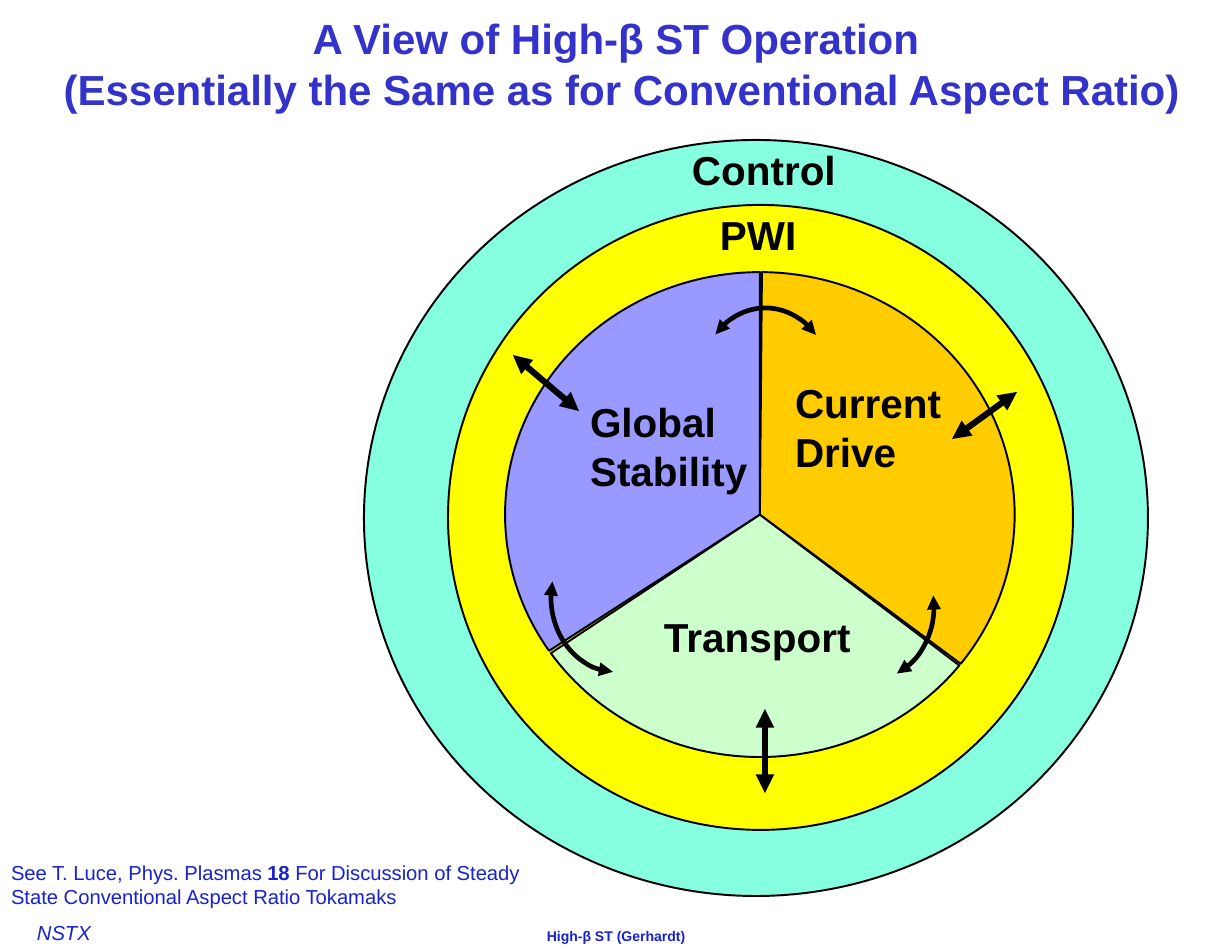
from lxml import etree
from pptx import Presentation
from pptx.dml.color import RGBColor
from pptx.enum.shapes import MSO_CONNECTOR, MSO_SHAPE
from pptx.enum.text import MSO_ANCHOR, PP_ALIGN
from pptx.oxml.ns import qn
from pptx.util import Inches, Pt

ELLIPSE, PIE, ARC = MSO_SHAPE.OVAL, MSO_SHAPE.BLOCK_ARC, MSO_SHAPE.ARC
PIE = MSO_SHAPE.PIE
STRAIGHT = MSO_CONNECTOR.STRAIGHT
LEFT, CENTER = PP_ALIGN.LEFT, PP_ALIGN.CENTER
TOP, MIDDLE = MSO_ANCHOR.TOP, MSO_ANCHOR.MIDDLE

FONT = "Arial"
COLORS = {
    "title": "3333CC", "note": "1822CD", "black": "000000",
    "control": "85FFE0", "pwi": "FFFF00", "transport": "CCFFCC",
    "current": "FFCC00", "stability": "9999FF",
}

# Content: boxes are left, top, width, height in inches; angles are degrees
TITLE = ("A View of High-β ST Operation\n"
         " (Essentially the Same as for Conventional Aspect Ratio)")
RINGS = [((3.25, 1.25, 7, 6.75), "control"), ((4, 1.83, 5.58, 5.58), "pwi")]
PIE_BOX = (4.51, 2.43, 4.55, 4.33)
SECTORS = [("transport", 37.12, 146.44), ("current", 270.49, 36.61),
           ("stability", 147.13, 270)]
LABELS = [
    ("Global Stability", (5.17, 3.5, 1.75, 0.98)),
    ("Current Drive", (7, 3.33, 1.75, 0.98)),
    ("Transport", (5.83, 5.42, 1.92, 0.54)),
    ("PWI", (6.33, 1.83, 1, 0.54)),
    ("Control", (6.08, 1.25, 1.92, 0.54)),
]
ARC_SIZE = (1.17, 1.33)
SECTOR_ARROWS = [((6.25, 2.75), 223.9, 316.74), ((7.17, 4.75), 350.43, 67),
                 ((4.92, 4.67), 92.75, 193.94)]
EDGE_ARROWS = [((8.5, 3.92), (9.08, 3.5)), ((6.83, 7.08), (6.83, 6.33)),
               ((5.17, 3.67), (4.58, 3.17))]
REFERENCE = [("See T. Luce, Phys. Plasmas ", False), ("18", True),
             (" For Discussion of Steady State Conventional Aspect Ratio Tokamaks",
              False)]


def rgb(name):
    return RGBColor.from_string(COLORS[name])


def place(shape, box):
    shape.left, shape.top, shape.width, shape.height = map(Inches, box)


def write(shape, text, size=26, color="black", bold=True, italic=False,
          align=LEFT, anchor=TOP, margins=(0.1, 0.05), wrap=True):
    """Fill a shape with a string or a list of (text, bold) pieces."""
    frame = shape.text_frame
    frame.word_wrap = wrap
    frame.vertical_anchor = anchor
    frame.margin_left = frame.margin_right = Inches(margins[0])
    frame.margin_top = frame.margin_bottom = Inches(margins[1])
    paragraph = frame.paragraphs[0]
    paragraph.alignment = align
    pieces = [(text, bold)] if isinstance(text, str) else text
    for piece, piece_bold in pieces:
        for number, line in enumerate(piece.split("\n")):
            if number:
                paragraph.add_line_break()
            run = paragraph.add_run()
            run.text = line
            font = run.font
            font.name, font.size = FONT, Pt(size)
            font.bold, font.italic = piece_bold, italic
            font.color.rgb = rgb(color)


def add_text(slide, text, box, **formatting):
    write(slide.shapes.add_textbox(*map(Inches, box)), text, **formatting)


def add_outlined(slide, kind, box, fill=None, width=1.25, angles=()):
    shape = slide.shapes.add_shape(kind, *map(Inches, box))
    shape.shadow.inherit = False
    for index, angle in enumerate(angles):
        # 60000 units per degree, normalised by 100000
        shape.adjustments[index] = angle * 0.6
    if fill:
        shape.fill.solid()
        shape.fill.fore_color.rgb = rgb(fill)
    else:
        shape.fill.background()
    shape.line.color.rgb = rgb("black")
    shape.line.width = Pt(width)
    return shape


def add_arrowheads(shape):
    line = shape.line._get_or_add_ln()
    for end in ("a:headEnd", "a:tailEnd"):
        etree.SubElement(line, qn(end), type="triangle")


def main():
    presentation = Presentation()
    presentation.slide_width, presentation.slide_height = Inches(11), Inches(8.5)
    slide = presentation.slides.add_slide(presentation.slide_layouts[5])

    # Footer
    add_text(slide, "NSTX", (0.33, 8.22, 0.65, 0.23), size=13, color="note",
             bold=False, italic=True, margins=(0, 0), wrap=False)
    add_text(slide, "High-β ST (Gerhardt)", (2.2, 8.22, 6.6, 0.27), size=9,
             color="note", align=CENTER, margins=(0.11, 0.06))

    # Title
    place(slide.shapes.title, (0, 0, 11, 1.13))
    write(slide.shapes.title, TITLE, size=27, color="title", align=CENTER,
          anchor=MIDDLE, margins=(0.11, 0.06))

    # Rings and sectors
    for box, color in RINGS:
        add_outlined(slide, ELLIPSE, box, color)
    for color, start, end in SECTORS:
        add_outlined(slide, PIE, PIE_BOX, color, angles=(start, end))

    # Labels and reference
    for text, box in LABELS:
        add_text(slide, text, box)
    add_text(slide, REFERENCE, (0, 7.63, 4.75, 0.54), size=13, color="note")

    # Curved arrows between sectors
    for corner, start, end in SECTOR_ARROWS:
        arc = add_outlined(slide, ARC, corner + ARC_SIZE, width=3,
                           angles=(start, end))
        add_arrowheads(arc)

    # Straight arrows between the sectors and the PWI ring
    for start, end in EDGE_ARROWS:
        arrow = slide.shapes.add_connector(STRAIGHT, *map(Inches, start + end))
        arrow.line.color.rgb = rgb("black")
        arrow.line.width = Pt(4)
        add_arrowheads(arrow)
        etree.SubElement(arrow._element.spPr, qn("a:effectLst"))

    presentation.save("out.pptx")


if __name__ == "__main__":
    main()
